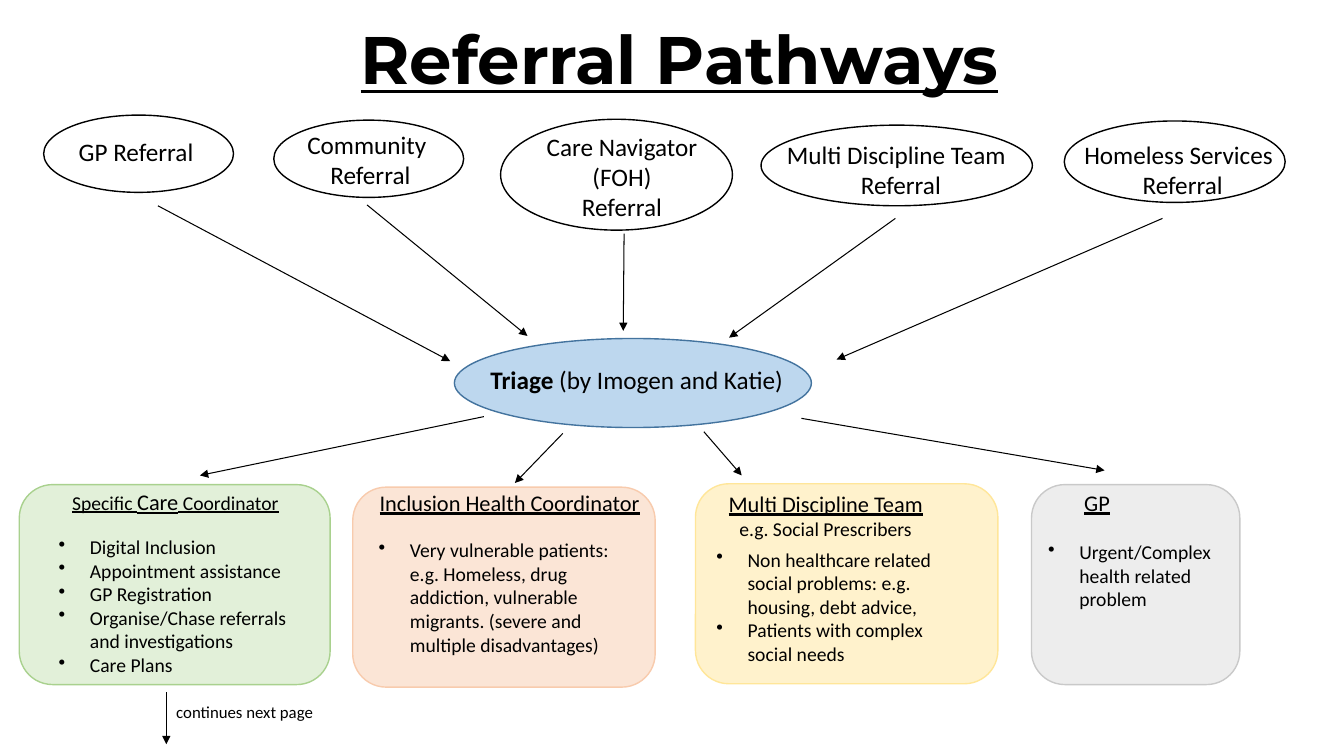
"""Builds the Referral Pathways slide on a grid of 160 columns by 90 rows."""
from dataclasses import dataclass

from pptx import Presentation
from pptx.dml.color import RGBColor
from pptx.enum.shapes import MSO_CONNECTOR, MSO_SHAPE
from pptx.enum.text import MSO_ANCHOR, MSO_AUTO_SIZE, PP_ALIGN
from pptx.oxml.ns import qn
from pptx.util import Inches, Pt

OVAL, CARD = MSO_SHAPE.OVAL, MSO_SHAPE.ROUNDED_RECTANGLE
LINE = MSO_CONNECTOR.STRAIGHT
LEFT, MID = PP_ALIGN.LEFT, PP_ALIGN.CENTER
BOTTOM, FIXED = MSO_ANCHOR.BOTTOM, MSO_AUTO_SIZE.NONE


@dataclass(frozen=True)
class Theme:
    """Colours, fonts and type sizes."""
    ink: str = "000000"
    blue: tuple = ("BDD7EE", "43739E")
    green: tuple = ("E2F0D9", "A9D18E")
    peach: tuple = ("FBE5D6", "F8CBAD")
    gold: tuple = ("FFF2CC", "FFE699")
    grey: tuple = ("EDEDED", "C9C9C9")
    clear: tuple = (None, "000000")
    body: str = "Calibri"
    head: str = "Montserrat"
    huge: int = 48
    big: int = 18
    mid: int = 16
    text: int = 14
    small: int = 12


look = Theme()
deck = Presentation()
deck.slide_width, deck.slide_height = Inches(40 / 3), Inches(7.5)
cell = deck.slide_width // 160
slide = deck.slides.add_slide(deck.slide_layouts[5])
shapes = slide.shapes


def grid(*cells):
    """Turn grid cells into lengths."""
    return [round(n * cell) for n in cells]


def write(frame, paras, font=look.body, bullet=False):
    """Fill a frame with (align, runs); a run is (text, size, marks)."""
    frame.word_wrap = True
    frame.auto_size = FIXED
    for i, (align, runs) in enumerate(paras):
        para = frame.add_paragraph() if i else frame.paragraphs[0]
        para.alignment = align
        if bullet:
            props = para._p.get_or_add_pPr()
            props.set("marL", str(Inches(0.31)))
            props.set("indent", str(-Inches(0.31)))
            props.makeelement(qn("a:buChar"), {"char": "•"})
            props.append(props.makeelement(qn("a:buChar"), {"char": "•"}))
        for text, size, marks in runs:
            run = para.add_run()
            run.text = text
            run.font.name = font
            run.font.size = Pt(size)
            run.font.bold = "b" in marks
            run.font.underline = "u" in marks
            run.font.color.rgb = RGBColor.from_string(look.ink)


title = shapes.title
title.left, title.top, title.width, title.height = grid(20.9, 1.4, 120, 11)
write(title.text_frame, [(MID, [("Referral Pathways", look.huge, "bu")])], look.head)
title.text_frame.vertical_anchor = BOTTOM
title.text_frame.paragraphs[0].line_spacing = 0.9

outlines = [
    (OVAL, look.clear, (5.2, 13.7, 22.6, 9.2)),
    (OVAL, look.clear, (32.6, 14.3, 22.6, 9.2)),
    (OVAL, look.clear, (59.6, 14.2, 27.6, 13.2)),
    (OVAL, look.clear, (90.6, 14.9, 32.3, 9.6)),
    (OVAL, look.clear, (126.7, 14.4, 26.3, 9.7)),
    (OVAL, look.blue, (54.1, 40.3, 42.5, 10.6)),
    (CARD, look.green, (2.3, 57.7, 37, 23.8)),
    (CARD, look.peach, (42, 58, 36, 23.8)),
    (CARD, look.gold, (82.8, 57.6, 36, 23.8)),
    (CARD, look.grey, (122.8, 57.7, 24.8, 23.8)),
]
for kind, (fill, edge), box in outlines:
    shape = shapes.add_shape(kind, *grid(*box))
    shape.shadow.inherit = False
    if fill:
        shape.fill.solid()
        shape.fill.fore_color.rgb = RGBColor.from_string(fill)
    else:
        shape.fill.background()
    shape.line.color.rgb = RGBColor.from_string(edge)
    shape.line.width = Pt(1)

arrows = [
    (18.8, 24.5, 53.6, 43, 0.75),
    (43.7, 24.4, 62.8, 40, 0.75),
    (74.3, 27.8, 74.2, 39.4, 0.75),
    (106.6, 26, 86.8, 40.2, 0.75),
    (138.4, 26, 99.6, 42.8, 0.75),
    (57.6, 49.6, 23.8, 56.6, 0.75),
    (67, 51.6, 61.3, 57.5, 0.75),
    (83.8, 51.4, 88.3, 56.6, 0.75),
    (95.4, 49.8, 131.5, 56, 0.75),
    (19.8, 82.4, 19.8, 88.6, 0.5),
]
for *ends, width in arrows:
    arrow = shapes.add_connector(LINE, *grid(*ends))
    arrow.line.color.rgb = RGBColor.from_string(look.ink)
    arrow.line.width = Pt(width)
    props = arrow._element.spPr
    stroke = arrow.line._get_or_add_ln()
    stroke.append(stroke.makeelement(qn("a:tailEnd"), {"type": "triangle"}))
    props.append(props.makeelement(qn("a:effectLst"), {}))

sources = [
    ((6.5, 15.6, 19.4, 4.8), MID, ["GP Referral"]),
    ((35.4, 14.8, 17.4, 8.5), LEFT, ["Community", "Referral"]),
    ((63.8, 15, 20.5, 12.1), MID, ["Care Navigator", "(FOH)", "Referral"]),
    ((92.5, 16, 29.5, 8.5), LEFT, ["Multi Discipline Team", "Referral"]),
    ((127.9, 16, 25.8, 8.5), LEFT, ["Homeless Services", "Referral"]),
]
for box, align, lines in sources:
    paras = [(MID if i else align, [(line, look.big, "")])
             for i, line in enumerate(lines)]
    write(shapes.add_textbox(*grid(*box)).text_frame, paras)

labels = [
    ((57.2, 42.8, 39.6, 6.4), [(LEFT, [("Triage", look.big, "b"),
                                       (" (by Imogen and Katie)", look.big, "")])]),
    ((7.4, 57.5, 27.4, 4.4), [(LEFT, [("Specific ", look.text, "u"),
                                      ("Care", look.mid, "u"),
                                      (" Coordinator", look.text, "u")])]),
    ((44, 57.6, 33.7, 4.4), [(LEFT, [("Inclusion Health Coordinator", look.mid, "u")])]),
    ((84.6, 57.7, 27.4, 7.3), [(MID, [("Multi Discipline Team", look.mid, "u")]),
                               (MID, [("e.g. Social Prescribers", look.text, "")])]),
    ((127.9, 57.6, 5.5, 4.4), [(LEFT, [("GP", look.mid, "u")])]),
    ((19.8, 83, 20.5, 3.6), [(LEFT, [("continues next page", look.small, "")])]),
]
for box, paras in labels:
    write(shapes.add_textbox(*grid(*box)).text_frame, paras)

duties = [
    ((5.8, 63.1, 31.1, 18.1), ["Digital Inclusion", "Appointment assistance",
                               "GP Registration",
                               "Organise/Chase referrals and investigations",
                               "Care Plans"]),
    ((43.9, 63.5, 32.8, 15.4), ["Very vulnerable patients: e.g. Homeless, drug "
                                "addiction, vulnerable migrants. (severe and "
                                "multiple disadvantages)"]),
    ((84.1, 64.6, 28.2, 15.4), ["Non healthcare related social problems: e.g. "
                                "housing, debt advice,",
                                "Patients with complex social needs"]),
    ((123.6, 63.7, 25, 9.7), ["Urgent/Complex health related problem"]),
]
for box, items in duties:
    paras = [(LEFT, [(item, look.text, "")]) for item in items]
    write(shapes.add_textbox(*grid(*box)).text_frame, paras, bullet=True)

deck.save("out.pptx")
